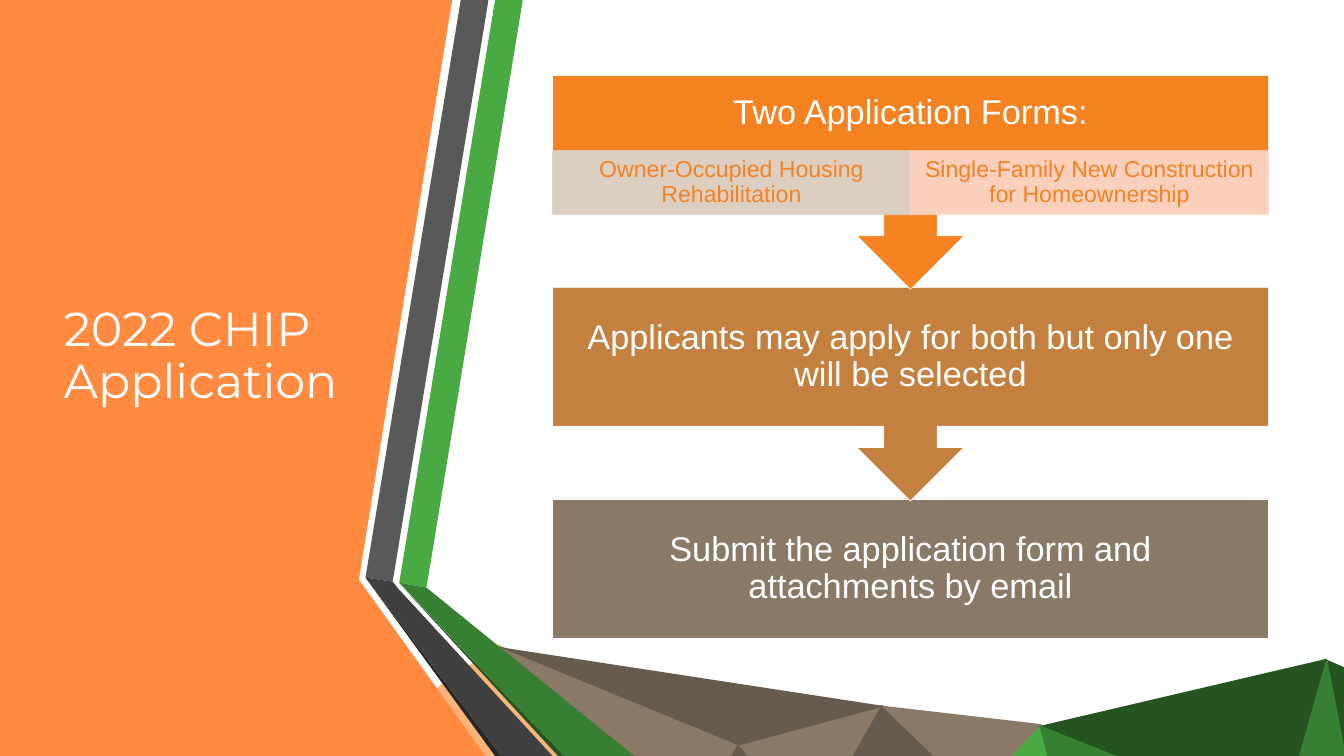
from lxml import etree
from pptx import Presentation, util as u
from pptx.dml.color import RGBColor
from pptx.enum import shapes, text
from pptx.oxml.ns import qn

ORANGE = RGBColor(0xF5, 0x82, 0x20)
PANEL_ORANGE = RGBColor(0xFF, 0x8A, 0x40)
PEACH = RGBColor(0xF9, 0xB4, 0x79)
COPPER = RGBColor(0xC4, 0x80, 0x3F)
TAUPE = RGBColor(0x8A, 0x79, 0x67)
DARK_TAUPE = RGBColor(0x67, 0x5B, 0x4D)
GREEN = RGBColor(0x49, 0xA9, 0x42)
MID_GREEN = RGBColor(0x37, 0x7F, 0x32)
DARK_GREEN = RGBColor(0x25, 0x54, 0x21)
GREY = RGBColor(0x59, 0x59, 0x59)
DARK_GREY = RGBColor(0x40, 0x40, 0x40)
CHARCOAL = RGBColor(0x26, 0x26, 0x26)
PALE_GREY = RGBColor(0xDA, 0xD7, 0xD3)
PALE_PINK = RGBColor(0xFB, 0xD8, 0xCC)
WHITE = RGBColor(0xFF, 0xFF, 0xFF)

deck = Presentation()
deck.slide_width, deck.slide_height = u.Inches(26.66), u.Inches(15)
slide = deck.slides.add_slide(deck.slide_layouts[6])


def add_block(preset, left, top, width, height, color, edge, opacity=100):
    block = slide.shapes.add_shape(preset, *map(u.Inches, (left, top, width, height)))
    block.shadow.inherit = False
    block.fill.solid()
    block.fill.fore_color.rgb = color
    block.line.color.rgb = edge
    block.line.width = u.Pt(1)
    if opacity < 100:
        for tint in block._element.spPr.iter(qn("a:srgbClr")):
            etree.SubElement(tint, qn("a:alpha"), val=str(opacity * 1000))
    return block


def write(holder, words, size, font, color, align, inset_x, inset_y):
    frame = holder.text_frame
    frame.text = words
    frame.word_wrap = True
    frame.vertical_anchor = text.MSO_ANCHOR.MIDDLE
    frame.margin_left = frame.margin_right = u.Inches(inset_x)
    frame.margin_top = frame.margin_bottom = u.Inches(inset_y)
    line = frame.paragraphs[0]
    line.alignment = align
    line.line_spacing = 0.9
    style = line.runs[0].font
    style.size, style.name = u.Pt(size), font
    style.color.rgb = color


# Faceted hills along the bottom, then the side panel and its folded ribbons
facets = [
    (PEACH, [(11.94, 16.63), (9.91, 12.78), (7.42, 14.52), (10.49, 16.63)]),
    (TAUPE, [(13.62, 16.65), (14.66, 14.76), (9.91, 12.81), (11.94, 16.65)]),
    (TAUPE, [(14.61, 14.78), (16.1, 16.47), (17.51, 13.99)]),
    (DARK_TAUPE, [(16.08, 16.46), (19.34, 15.79), (17.49, 13.99)]),
    (TAUPE, [(17.48, 14), (19.34, 15.79), (20.67, 14.37)]),
    (GREEN, [(21.24, 16.7), (20.64, 14.39), (19.31, 15.82), (20.27, 16.7)]),
    (DARK_GREEN, [(20.6, 14.41), (25.4, 16.32), (26.32, 13.07)]),
    (MID_GREEN, [(24.41, 16.7), (25.42, 16.3), (20.62, 14.39), (21.21, 16.7)]),
    (DARK_GREEN, [(26.8, 13.3), (26.32, 13.09), (26.8, 15.56)]),
    (MID_GREEN, [(26.8, 16.7), (26.8, 15.52), (26.32, 13.05), (25.4, 16.3), (26, 16.7)]),
    (DARK_TAUPE, [(9.91, 12.84), (17.55, 14.01), (14.66, 14.79)]),
    (DARK_TAUPE, [(15.71, 16.67), (16.11, 16.46), (14.63, 14.77), (13.59, 16.67)]),
]
panel = [(PANEL_ORANGE, [(0, 0), (8.97, 0), (7.12, 11.5), (9.63, 15), (0, 15)])]
ribbons = [
    (GREEN, [(7.92, 11.56), (8.46, 11.66), (10.37, 0), (9.82, 0)]),
    (GREY, [(9.69, 0), (9.14, 0), (7.25, 11.46), (7.79, 11.54)]),
    (CHARCOAL, [(7.25, 11.46), (9.82, 15), (9.94, 15)]),
    (DARK_GREEN, [(7.92, 11.57), (11.07, 15), (11.19, 15)]),
    (MID_GREEN, [(7.92, 11.56), (11.19, 15), (12.58, 15), (8.46, 11.66)]),
    (DARK_GREY, [(10.96, 15), (7.89, 11.67), (7.79, 11.54), (7.25, 11.46), (9.94, 15)]),
]
for color, corners in facets + panel + ribbons:
    start, *rest = [(u.Inches(x), u.Inches(y)) for x, y in corners]
    outline = slide.shapes.build_freeform(*start)
    outline.add_line_segments(rest, close=True)
    piece = outline.convert_to_shape()
    piece.shadow.inherit = False
    piece.fill.solid()
    piece.fill.fore_color.rgb = color
    piece.line.fill.background()

# Title
title = slide.shapes.add_textbox(*map(u.Inches, (1.17, 1.5, 6.08, 11.17)))
write(title, "2022 CHIP Application", 68, "Montserrat", WHITE, text.PP_ALIGN.LEFT, 0.1, 0.05)

# Flow of three steps, stacked from the last so each arrow tip lies on top
FLOW_LEFT, FLOW_TOP, FLOW_WIDTH = 10.96, 1.5, 14.2
STEP_PITCH, BOX_HEIGHT, CALLOUT_HEIGHT = 4.2, 2.76, 4.24
HEADING_HEIGHT, FORM_HEIGHT = 1.49, 1.27
steps = [
    ("Two Application Forms:", ORANGE, HEADING_HEIGHT),
    ("Applicants may apply for both but only one will be selected", COPPER, BOX_HEIGHT),
    ("Submit the application form and attachments by email", TAUPE, BOX_HEIGHT),
]
for row, (words, color, label_height) in reversed(list(enumerate(steps))):
    top = FLOW_TOP + row * STEP_PITCH
    if row == len(steps) - 1:
        label = add_block(shapes.MSO_SHAPE.RECTANGLE, FLOW_LEFT, top,
                          FLOW_WIDTH, BOX_HEIGHT, color, WHITE)
    else:
        callout = add_block(shapes.MSO_SHAPE.UP_ARROW_CALLOUT, FLOW_LEFT, top,
                            FLOW_WIDTH, CALLOUT_HEIGHT, color, WHITE)
        callout.rotation = 180
        label = slide.shapes.add_textbox(
            *map(u.Inches, (FLOW_LEFT, top, FLOW_WIDTH, label_height)))
    write(label, words, 49, "Arial", WHITE, text.PP_ALIGN.CENTER, 0.38, 0.38)

# The two application forms, side by side under the first heading
forms = [
    ("Owner-Occupied Housing Rehabilitation", PALE_GREY),
    ("Single-Family New Construction for Homeownership", PALE_PINK),
]
form_width = FLOW_WIDTH / len(forms)
for column, (words, color) in enumerate(forms):
    form = add_block(shapes.MSO_SHAPE.RECTANGLE, FLOW_LEFT + column * form_width,
                     FLOW_TOP + HEADING_HEIGHT, form_width, FORM_HEIGHT, color, color, 90)
    write(form, words, 33, "Arial", ORANGE, text.PP_ALIGN.CENTER, 0.26, 0.05)

deck.save("out.pptx")
